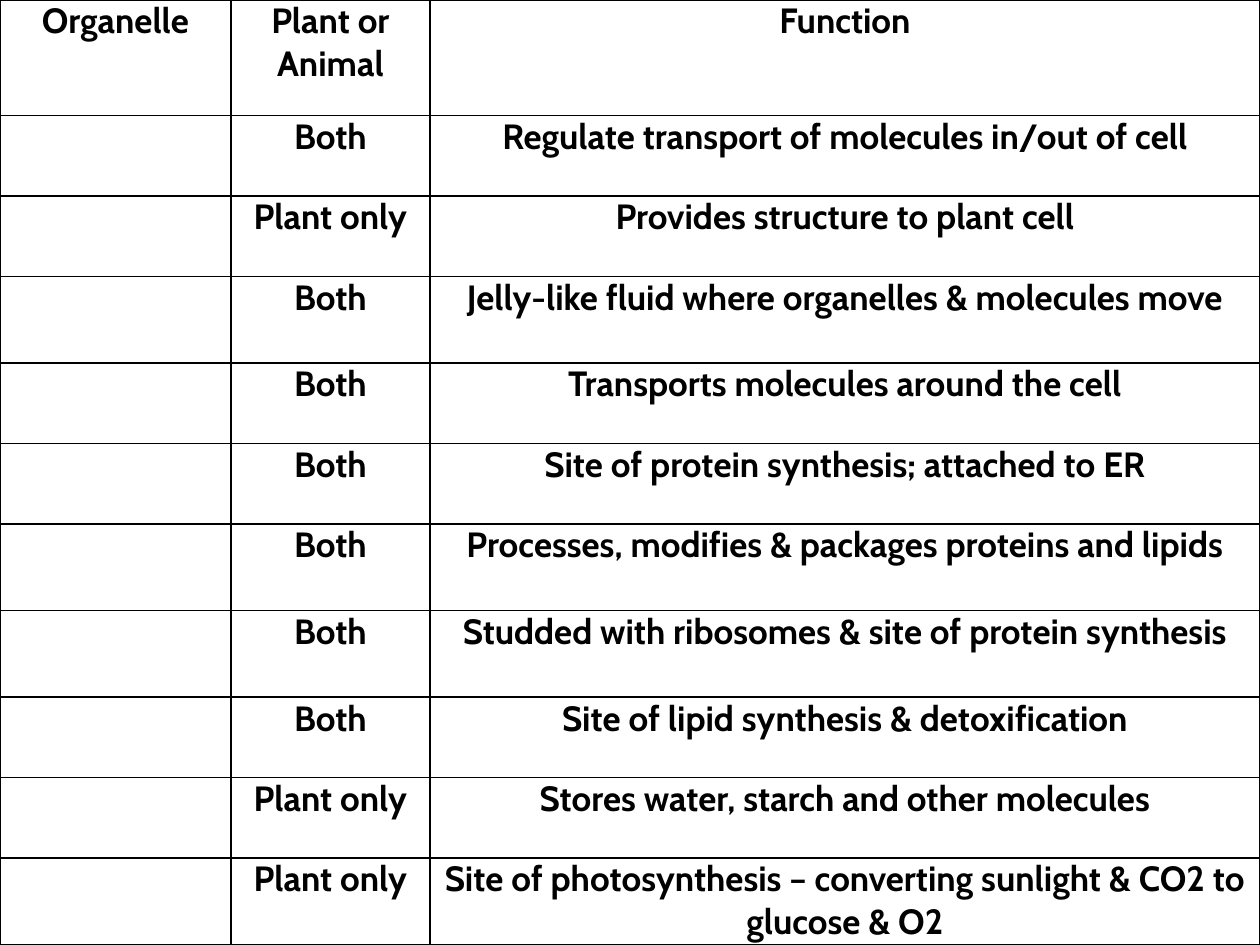
from dataclasses import dataclass

from lxml import etree
from pptx import Presentation
from pptx import util as u
from pptx.dml.color import RGBColor
from pptx.enum import text
from pptx.oxml import ns


@dataclass(frozen=True)
class Theme:
    font: str = "Cabin"
    size: int = 20
    ink: str = "000000"
    border: int = 1
    side_margin: float = 0.07


HEADINGS = ("Organelle", "Plant or Animal", "Function")
COLUMN_WEIGHTS = (1.83, 1.58, 6.58)
HEADER, SHORT, TALL = 0.92, 0.64, 0.69
ORGANELLES = (
    (SHORT, "Both", "Regulate transport of molecules in/out of cell"),
    (SHORT, "Plant only", "Provides structure to plant cell"),
    (TALL, "Both", "Jelly-like fluid where organelles & molecules move"),
    (SHORT, "Both", "Transports molecules around the cell"),
    (SHORT, "Both", "Site of protein synthesis; attached to ER"),
    (TALL, "Both", "Processes, modifies & packages proteins and lipids"),
    (TALL, "Both", "Studded with ribosomes & site of protein synthesis"),
    (SHORT, "Both", "Site of lipid synthesis & detoxification"),
    (SHORT, "Plant only", "Stores water, starch and other molecules"),
    (TALL, "Plant only",
     "Site of photosynthesis – converting sunlight & CO2 to glucose & O2"),
)


def share_out(total, weights):
    """Split a length in proportion to the weights."""
    return [int(total * weight / sum(weights)) for weight in weights]


class Page:
    def __init__(self, deck, theme):
        self.deck, self.theme = deck, theme
        self.slide = deck.slides.add_slide(deck.slide_layouts[6])

    def table(self, rows, column_weights, row_weights):
        """Fill the whole slide with a ruled table."""
        width, height = self.deck.slide_width, self.deck.slide_height
        grid = self.slide.shapes.add_table(
            len(rows), len(column_weights), 0, 0, width, height).table
        grid.first_row = grid.horz_banding = False
        for column, size in zip(grid.columns, share_out(width, column_weights)):
            column.width = size
        for row, size in zip(grid.rows, share_out(height, row_weights)):
            row.height = size
        for row, words in zip(grid.rows, rows):
            for cell, wording in zip(row.cells, words):
                self.cell(cell, wording)

    def cell(self, cell, wording):
        side = u.Inches(self.theme.side_margin)
        margins = {"margin_left": side, "margin_right": side,
                   "margin_top": 0, "margin_bottom": 0}
        for name, value in margins.items():
            setattr(cell, name, value)
        self.borders(cell)
        cell.fill.background()
        if wording:
            para = cell.text_frame.paragraphs[0]
            para.alignment = text.PP_ALIGN.CENTER
            self.span(para, wording)

    def span(self, para, wording):
        span = para.add_run()
        span.text = wording
        style = {"name": self.theme.font, "size": u.Pt(self.theme.size), "bold": True}
        for name, value in style.items():
            setattr(span.font, name, value)
        span.font.color.rgb = RGBColor.from_string(self.theme.ink)

    def borders(self, cell):
        properties = cell._tc.get_or_add_tcPr()
        for side in ("a:lnL", "a:lnR", "a:lnT", "a:lnB"):
            line = etree.SubElement(properties, ns.qn(side),
                                    w=str(u.Pt(self.theme.border)))
            fill = etree.SubElement(line, ns.qn("a:solidFill"))
            etree.SubElement(fill, ns.qn("a:srgbClr"), val=self.theme.ink)


def main():
    deck = Presentation()
    deck.slide_width, deck.slide_height = u.Inches(10), u.Inches(7.5)
    page = Page(deck, Theme())
    rows = [HEADINGS] + [("", kind, function) for _, kind, function in ORGANELLES]
    row_weights = [HEADER] + [weight for weight, _, _ in ORGANELLES]
    page.table(rows, COLUMN_WEIGHTS, row_weights)
    deck.save("out.pptx")


if __name__ == "__main__":
    main()
